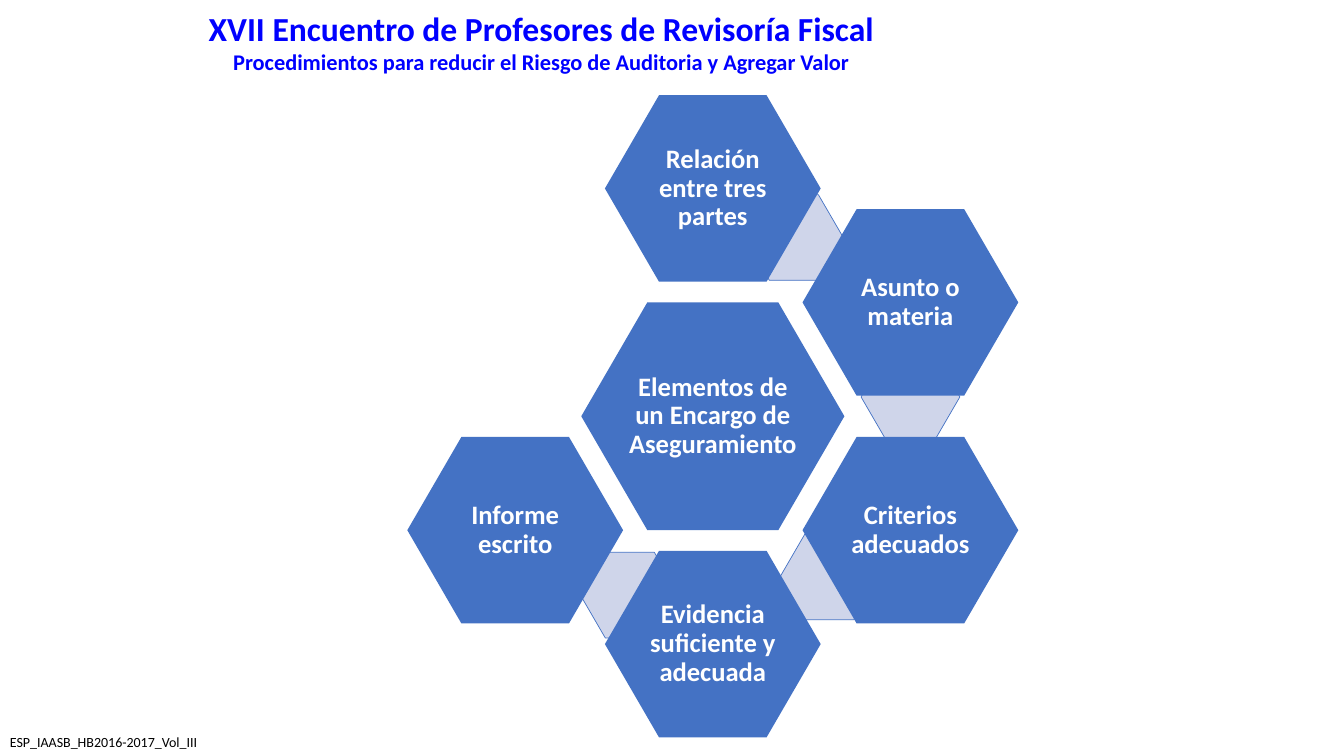
import pptx
import pptx.dml.color
import pptx.enum.shapes
import pptx.enum.text
import pptx.util

Inches = pptx.util.Inches
Pt = pptx.util.Pt
ALIGN = pptx.enum.text.PP_ALIGN

SLIDE_WIDTH, SLIDE_HEIGHT = 13.33, 7.5
FONT = "Calibri"
COLORS = {"title": "0000FF", "node": "4472C4", "link": "CFD5EA",
          "label": "FFFFFF", "source": "000000"}

TITLE_LINES = [
    ("XVII Encuentro de Profesores de Revisoría Fiscal", 24),
    ("Procedimientos para reducir el Riesgo de Auditoria y Agregar Valor", 16),
]
SOURCE_LINES = [("ESP_IAASB_HB2016-2017_Vol_III", 10)]

# Column and row offsets from the central hexagon, on the honeycomb grid
CORE = "Elementos de un Encargo de Aseguramiento"
ELEMENTS = [
    # label, label position, position of the link behind it
    ("Relación entre tres partes", (0, -2), (0.41, -1.57)),
    ("Asunto o materia", (1, -1), (1, -0.17)),
    ("Criterios adecuados", (1, 1), (0.59, 1.41)),
    ("Evidencia suficiente y adecuada", (0, 2), (-0.42, 1.57)),
    ("Informe escrito", (-1, 1), None),
]
CENTER_X, CENTER_Y = 7.07, 4.13
COLUMN_STEP, ROW_STEP = 1.96, 1.13
CORE_SIZE, NODE_SIZE, LINK_SIZE = (2.61, 2.26), (2.14, 1.85), (0.98, 0.85)


def color(name):
    return pptx.dml.color.RGBColor.from_string(COLORS[name])


def write_lines(text_frame, lines, color_name, bold, alignment):
    text_frame.word_wrap = True
    text_frame.text = "\n".join(text for text, size in lines)
    for paragraph, (text, size) in zip(text_frame.paragraphs, lines):
        paragraph.alignment = alignment
        font = paragraph.runs[0].font
        font.name, font.size, font.bold = FONT, Pt(size), bold
        font.color.rgb = color(color_name)


def add_text(slide, box, *style):
    textbox = slide.shapes.add_textbox(*map(Inches, box))
    write_lines(textbox.text_frame, *style)


def add_hexagon(slide, position, size, fill):
    column, row = position
    width, height = size
    hexagon = slide.shapes.add_shape(
        pptx.enum.shapes.MSO_SHAPE.HEXAGON,
        Inches(CENTER_X + column * COLUMN_STEP - width / 2),
        Inches(CENTER_Y + row * ROW_STEP - height / 2),
        Inches(width), Inches(height))
    hexagon.adjustments[0] = 0.29
    hexagon.shadow.inherit = False
    hexagon.fill.solid()
    hexagon.fill.fore_color.rgb = color(fill)
    return hexagon


def add_node(slide, label, position, size):
    node = add_hexagon(slide, position, size, "node")
    node.line.fill.background()
    frame = node.text_frame
    frame.margin_left = frame.margin_right = 0
    frame.margin_top = frame.margin_bottom = Inches(0.03)
    frame.vertical_anchor = pptx.enum.text.MSO_ANCHOR.MIDDLE
    write_lines(frame, [(label, 19)], "label", True, ALIGN.CENTER)
    frame.paragraphs[0].line_spacing = 0.9


def add_link(slide, position):
    link = add_hexagon(slide, position, LINK_SIZE, "link")
    link.line.color.rgb = color("node")
    link.line.width = Pt(0.5)


def main():
    presentation = pptx.Presentation()
    presentation.slide_width = Inches(SLIDE_WIDTH)
    presentation.slide_height = Inches(SLIDE_HEIGHT)
    slide = presentation.slides.add_slide(presentation.slide_layouts[6])

    add_text(slide, (1.94, 0.03, 6.86, 0.77), TITLE_LINES, "title", True, ALIGN.CENTER)
    add_text(slide, (0, 7.23, 7.31, 0.27), SOURCE_LINES, "source", False, ALIGN.LEFT)

    add_node(slide, CORE, (0, 0), CORE_SIZE)
    for label, position, link_position in ELEMENTS:
        if link_position:
            add_link(slide, link_position)
        add_node(slide, label, position, NODE_SIZE)

    presentation.save("out.pptx")


if __name__ == "__main__":
    main()
